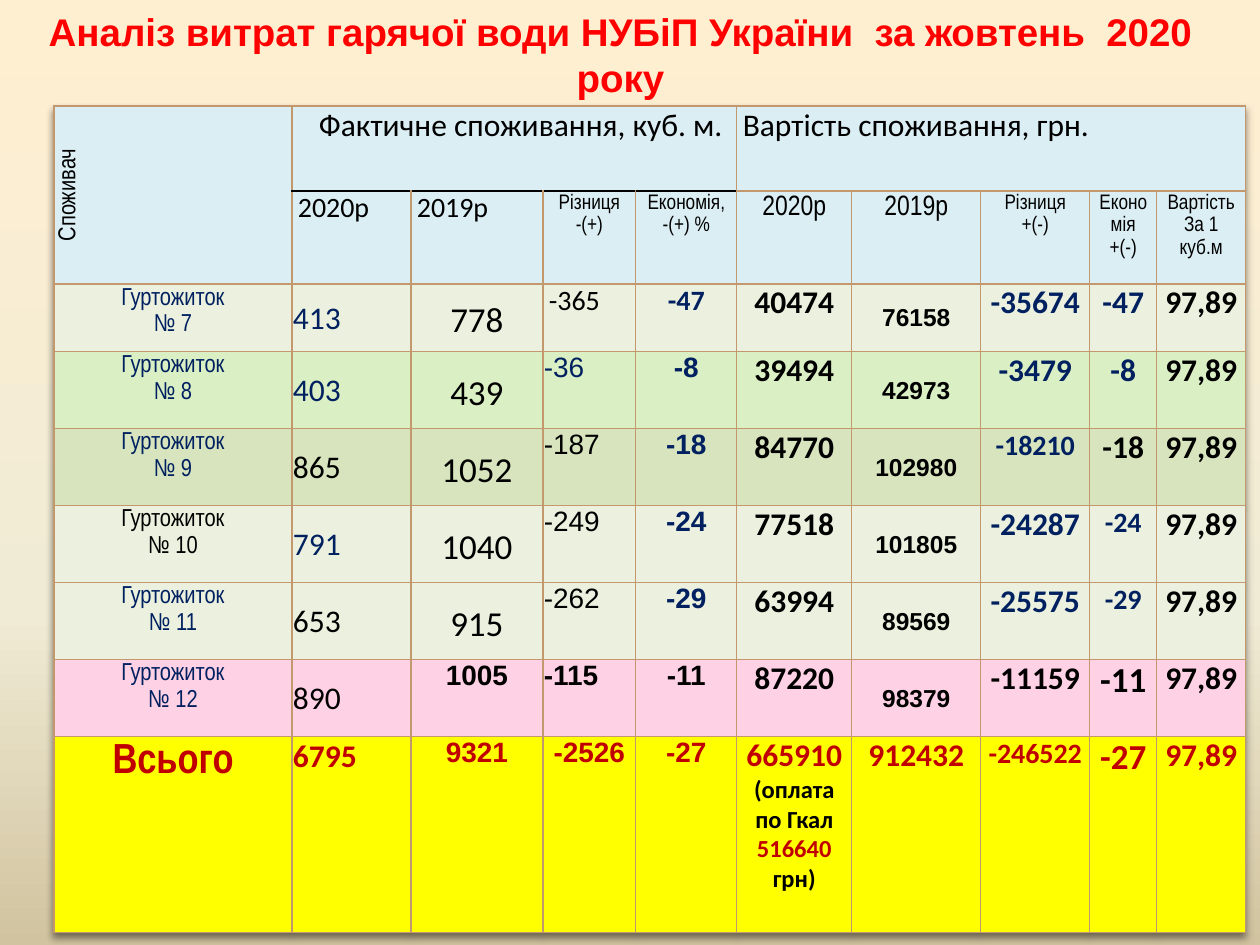
from copy import deepcopy
from dataclasses import dataclass, replace

from pptx import Presentation
from pptx import util as u
from pptx.dml.color import RGBColor
from pptx.enum import text
from pptx.oxml import parse_xml
from pptx.oxml.ns import nsdecls, qn

PX = u.Inches(1) // 126
LEFT, CENTER, JUSTIFY = (text.PP_ALIGN.LEFT, text.PP_ALIGN.CENTER,
                         text.PP_ALIGN.JUSTIFY)
TOP, MIDDLE = text.MSO_ANCHOR.TOP, text.MSO_ANCHOR.MIDDLE


class Theme:
    sky = [(0, "FFEFD1"), (0.65, "F0EBD5"), (1, "D1C39F")]
    title = "FF0000"
    ink = {"k": "000000", "n": "002060", "r": "C00000"}
    header, border, rule = "DBEEF4", "C3986D", "000000"
    calibri, arial, narrow = "Calibri", "Arial", "Arial Narrow"
    title_size, total_size, big, body, medium, small, tiny = 22, 24, 20, 18, 16, 14, 12


@dataclass(frozen=True)
class Style:
    font: str = Theme.calibri
    size: int = Theme.body
    bold: bool = False
    align: object = LEFT
    anchor: object = TOP
    inset: int = 6
    top: int = 0
    spacing: float = 1.0
    indent: int = 0


# Content
TITLE = "Аналіз витрат гарячої води НУБіП України  за жовтень  2020 року"
GROUPS = [(1, 4, "Фактичне споживання, куб. м."), (5, 9, "Вартість споживання, грн.")]
HEADINGS = ["2020р", "2019р", "Різниця\n-(+)", "Економія,\n-(+) %", "2020р",
            "2019р", "Різниця\n+(-)", "Економія\n+(-)", "Вартість\nЗа 1 куб.м"]
# Each row: fill, ink of every cell, values
ROWS = [
    ("EBF1DE", "nnkknkknnk", ["Гуртожиток\v№ 7", "413", "778", "-365", "-47",
                              "40474", "76158", "-35674", "-47", "97,89"]),
    ("DAEFC3", "nnknnkknnk", ["Гуртожиток\v№ 8", "403", "439", "-36", "-8",
                              "39494", "42973", "-3479", "-8", "97,89"]),
    ("D7E4BD", "nkkknkknkk", ["Гуртожиток\v№ 9", "865", "1052", "-187", "-18",
                              "84770", "102980", "-18210", "-18", "97,89"]),
    ("EBF1DE", "knkknkknnk", ["Гуртожиток\v№ 10", "791", "1040", "-249", "-24",
                              "77518", "101805", "-24287", "-24", "97,89"]),
    ("EBF1DE", "nkkknkknnk", ["Гуртожиток\v№ 11", "653", "915", "-262", "-29",
                              "63994", "89569", "-25575", "-29", "97,89"]),
    ("FFD1E4", "nkkkkkkkkk", ["Гуртожиток\v№ 12", "890", "1005", "-115", "-11",
                              "87220", "98379", "-11159", "-11", "97,89"]),
    ("FFFF00", "rrrrrrrrrr", ["Всього", "6795", "9321", "-2526", "-27",
                              "665910\n(оплата по Гкал\n516640\nгрн)",
                              "912432", "-246522", "-27", "97,89"]),
]
PAYMENT_INKS = "rkrk"

# Layout in px
COLUMNS = [238, 119, 132, 93, 101, 115, 129, 109, 67, 89]
HEIGHTS = [85, 93, 53] + [77] * 5 + [196]
TABLE_LEFT, TABLE_TOP = 54, 106

# Styles by column, then the cells that differ
NAME = Style(Theme.narrow, Theme.small, align=CENTER, spacing=1.15)
ARIAL = Style(Theme.arial, Theme.medium, inset=1, top=1)
ARIAL_BOLD = replace(ARIAL, bold=True, align=CENTER)
COST = Style(bold=True, align=CENTER)
COST_MEDIUM, COST_BIG = replace(COST, size=Theme.medium), replace(COST, size=Theme.big)
BY_COLUMN = [
    NAME,
    Style(anchor=MIDDLE, inset=1, top=1),
    Style(size=Theme.big, align=CENTER, anchor=MIDDLE, inset=9, spacing=1.15),
    ARIAL,
    ARIAL_BOLD,
    COST,
    replace(ARIAL_BOLD, size=Theme.small, anchor=MIDDLE),
    COST, COST, COST,
]
SPECIAL = {
    (0, 3): Style(size=Theme.medium), (0, 4): COST_MEDIUM,
    (2, 7): COST_MEDIUM, (3, 8): COST_MEDIUM, (4, 8): COST_MEDIUM,
    (5, 2): ARIAL_BOLD, (5, 3): replace(ARIAL, bold=True), (5, 8): COST_BIG,
    (6, 0): replace(NAME, size=Theme.total_size, bold=True),
    (6, 1): Style(bold=True, align=JUSTIFY, inset=1, top=1),
    (6, 2): ARIAL_BOLD, (6, 3): ARIAL_BOLD, (6, 6): COST,
    (6, 7): COST_MEDIUM, (6, 8): COST_BIG,
}
HEAD_SMALL = replace(NAME, size=Theme.tiny)
HEAD_YEAR = replace(NAME, size=Theme.medium)
HEAD_STYLES = ([Style(size=Theme.medium)] * 2 + [HEAD_SMALL] * 2
               + [HEAD_YEAR] * 2 + [HEAD_SMALL] * 3)


def format_para(para, style, color):
    para.alignment = style.align
    para.line_spacing = style.spacing
    if style.indent:
        para._p.get_or_add_pPr().set("marL", str(style.indent * PX))
    for span in para.runs:
        span.font.name, span.font.size = style.font, u.Pt(style.size)
        span.font.bold = style.bold
        span.font.color.rgb = RGBColor.from_string(color)


def add_borders(cell, ruled=None):
    props = cell._tc.get_or_add_tcPr()
    for place, side in enumerate(("lnL", "lnR", "lnT", "lnB")):
        color, width = (Theme.rule, 1) if side == ruled else (Theme.border, 0.79)
        props.insert(place, parse_xml(
            f'<a:{side} {nsdecls("a")} w="{int(u.Pt(width))}"><a:solidFill>'
            f'<a:srgbClr val="{color}"/></a:solidFill></a:{side}>'))


def fill_cell(cell, words, style, fill, ink="k"):
    cell.text_frame.text = words
    cell.vertical_anchor = style.anchor
    cell.margin_left = cell.margin_right = style.inset * PX
    cell.margin_top, cell.margin_bottom = style.top * PX, 0
    cell.fill.solid()
    cell.fill.fore_color.rgb = RGBColor.from_string(fill)
    for para in cell.text_frame.paragraphs:
        format_para(para, style, Theme.ink[ink])


def paint_background(page):
    fill = page.background.fill
    fill.gradient()
    fill.gradient_angle = 270
    stops = page._element.find(".//" + qn("a:gsLst"))
    stops.append(deepcopy(stops[0]))
    for stop, (position, color) in zip(fill.gradient_stops, Theme.sky):
        stop.position = position
        stop.color.rgb = RGBColor.from_string(color)


def add_title(page):
    box = page.shapes.add_textbox(25 * PX, -34 * PX, 1191 * PX, 218 * PX)
    frame = box.text_frame
    frame.word_wrap, frame.vertical_anchor = True, MIDDLE
    frame.margin_bottom = 48 * PX
    frame.text = TITLE
    format_para(frame.paragraphs[0],
                Style(Theme.arial, Theme.title_size, True, CENTER), Theme.title)


def add_usage_table(page):
    table = page.shapes.add_table(
        len(HEIGHTS), len(COLUMNS), TABLE_LEFT * PX, TABLE_TOP * PX,
        sum(COLUMNS) * PX, sum(HEIGHTS) * PX).table
    table.first_row = table.horz_banding = False
    for column, width in zip(table.columns, COLUMNS):
        column.width = width * PX
    for row, height in zip(table.rows, HEIGHTS):
        row.height = height * PX
    table._tbl.tblPr.insert(0, parse_xml(
        f'<a:effectLst {nsdecls("a")}><a:outerShdw blurRad="50800" dist="38100" '
        'dir="5400000"><a:srgbClr val="000000"><a:alpha val="50000"/></a:srgbClr>'
        '</a:outerShdw></a:effectLst>'))

    # Header
    consumer = table.cell(0, 0)
    consumer.merge(table.cell(1, 0))
    fill_cell(consumer, "Споживач", replace(NAME, anchor=MIDDLE), Theme.header)
    consumer._tc.get_or_add_tcPr().set("vert", "vert270")
    for first, last, words in GROUPS:
        table.cell(0, first).merge(table.cell(0, last))
        fill_cell(table.cell(0, first), words,
                  Style(indent=21 if first == 1 else 0), Theme.header)
    for col, (words, style) in enumerate(zip(HEADINGS, HEAD_STYLES), 1):
        fill_cell(table.cell(1, col), words, style, Theme.header)

    # Dormitories and total
    for row, (fill, inks, values) in enumerate(ROWS):
        for col, (words, ink) in enumerate(zip(values, inks)):
            style = SPECIAL.get((row, col), BY_COLUMN[col])
            fill_cell(table.cell(row + 2, col), words, style, fill, ink)
    payment = table.cell(len(HEIGHTS) - 1, 5).text_frame.paragraphs
    for para, ink in list(zip(payment, PAYMENT_INKS))[1:]:
        format_para(para, replace(COST, size=Theme.small), Theme.ink[ink])

    # Borders, with a dark rule under the consumption group
    for row in range(len(HEIGHTS)):
        for col in range(len(COLUMNS)):
            ruled = {0: "lnB", 1: "lnT"}.get(row) if 1 <= col <= 4 else None
            add_borders(table.cell(row, col), ruled)


def main():
    deck = Presentation()
    deck.slide_width, deck.slide_height = 1260 * PX, 945 * PX
    page = deck.slides.add_slide(deck.slide_layouts[6])
    paint_background(page)
    add_title(page)
    add_usage_table(page)
    deck.save("out.pptx")


if __name__ == "__main__":
    main()
